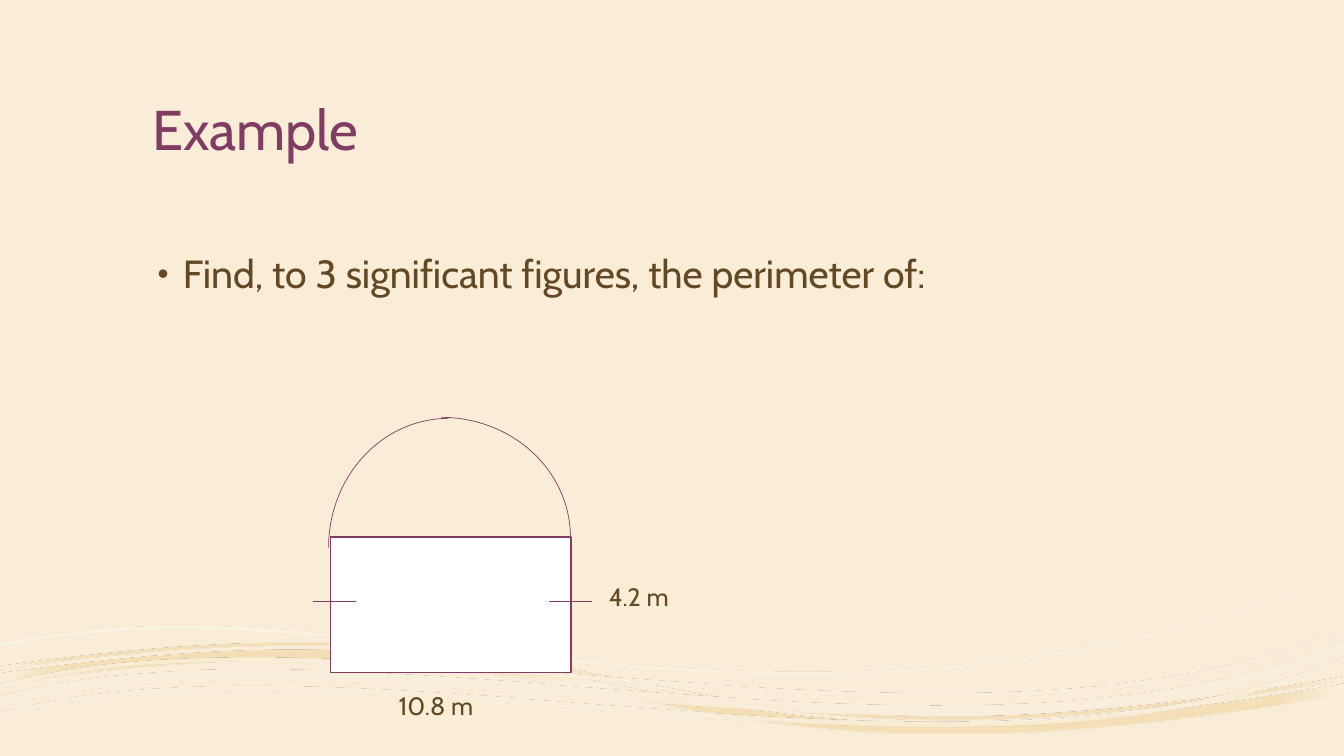
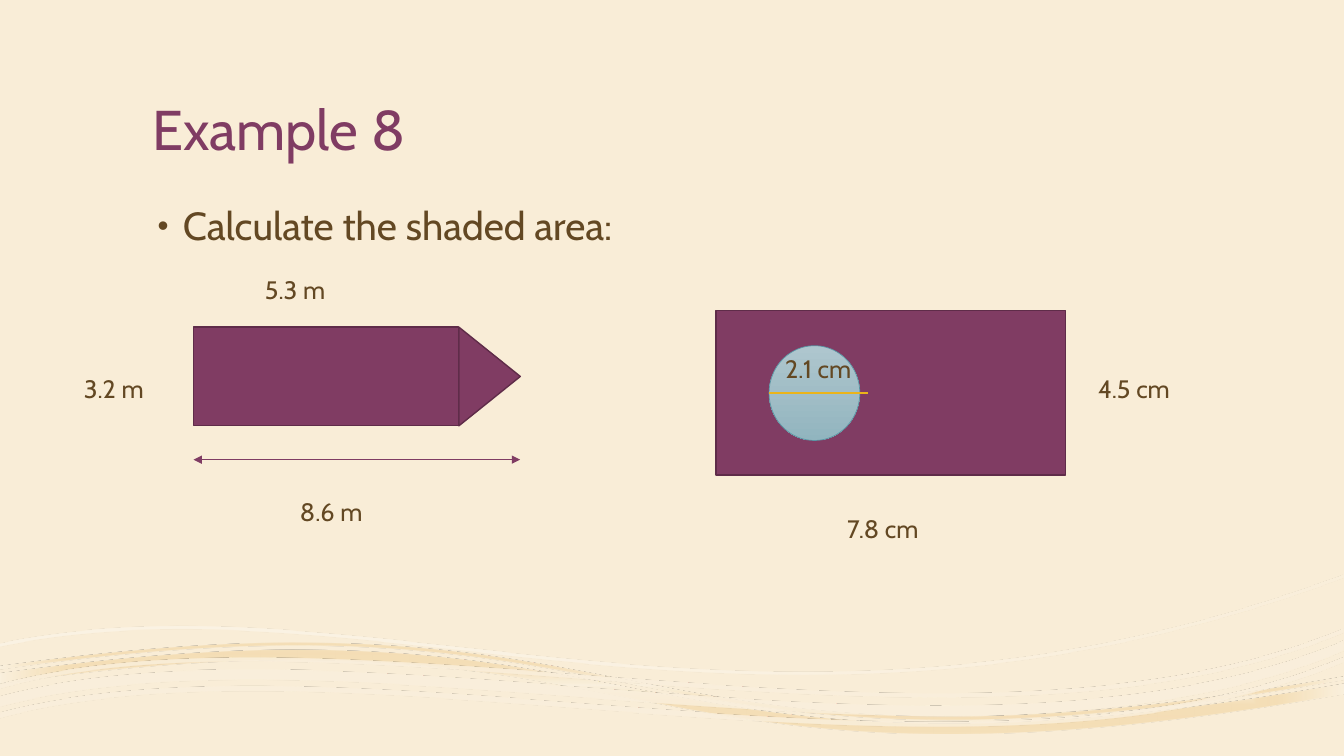
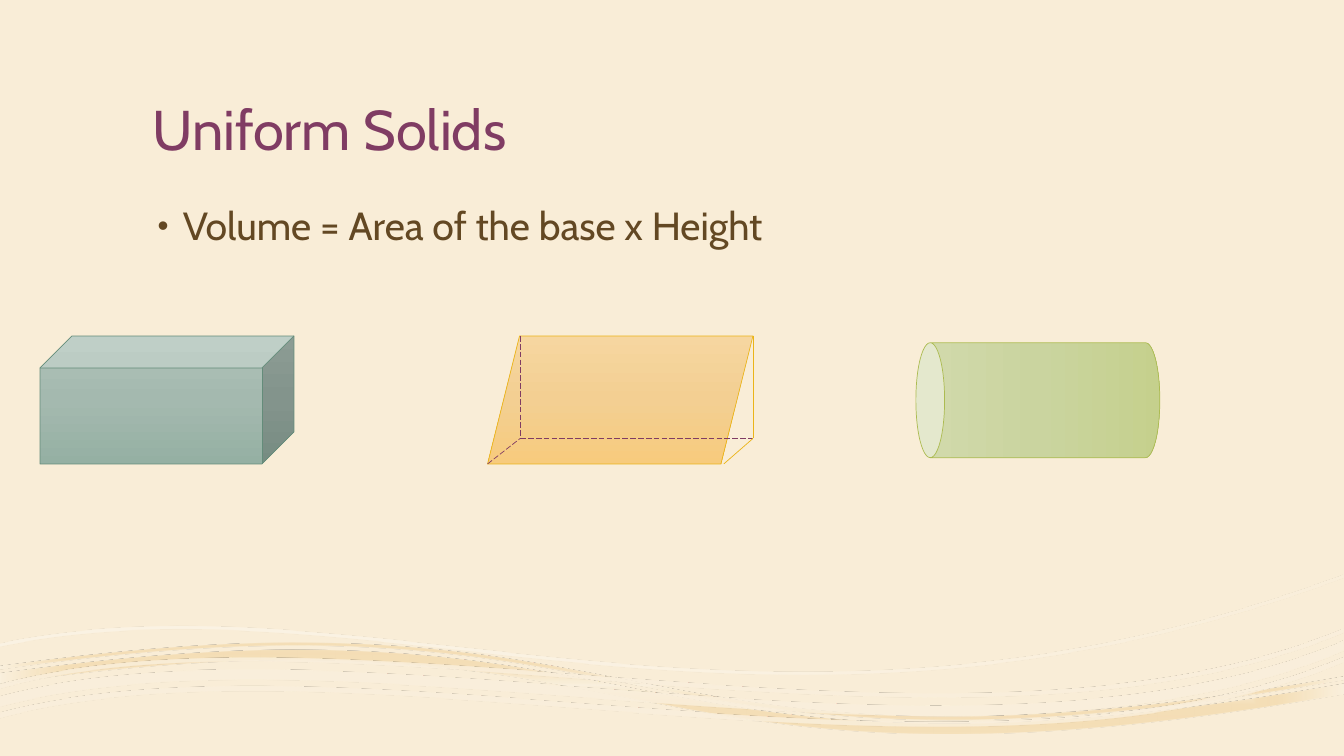
from dataclasses import dataclass
from math import cos, radians, sin
from typing import Any, Optional

from lxml.etree import SubElement
from pptx import Presentation
from pptx.dml.color import RGBColor
from pptx.enum.dml import MSO_LINE
from pptx.enum.shapes import MSO_CONNECTOR, MSO_SHAPE
from pptx.enum.text import MSO_ANCHOR, PP_ALIGN
from pptx.oxml import parse_xml
from pptx.oxml.ns import nsdecls, qn
from pptx.util import Inches, Pt

CELL = Inches(0.1)
WIDE, HIGH = 133.33, 75
FONT = "Cabin"
SAND, PLUM, BROWN = "F9EDD7", "803C63", "634823"
DARK, GOLD, WHITE = "5F2C49", "EBB419", "FFFFFF"
TILT = 3.5

Spot = tuple[float, float]
Area = tuple[float, float, float, float]


@dataclass(frozen=True)
class Blend:
    stops: tuple[tuple, ...]
    angle: int = 90
    shade: str = ""
    focus: tuple[int, int, int, int] = (50, 50, 50, 50)


@dataclass(frozen=True)
class Wave:
    area: Area
    bands: tuple[Spot, ...]
    top: tuple[Spot, ...]
    base: tuple[Spot, ...]
    fill: Blend


@dataclass(frozen=True)
class Form:
    kind: MSO_SHAPE
    area: Area
    fill: Any
    line: str
    width: float = 0.5
    turn: int = 0


@dataclass(frozen=True)
class Rule:
    start: Spot
    end: Spot
    line: str = PLUM
    width: float = 0.5
    dash: Optional[MSO_LINE] = None
    heads: bool = False


@dataclass(frozen=True)
class Label:
    text: str
    left: float
    top: float
    width: float


@dataclass(frozen=True)
class Page:
    title: str
    point: str
    top: float
    items: tuple


def cells(*vals: float) -> list[int]:
    return [round(val * CELL) for val in vals]


def tint(code: str) -> RGBColor:
    return RGBColor.from_string(code)


def adorn(thing: Any, look: dict[str, Any]) -> None:
    for name, val in look.items():
        setattr(thing, name, val)


def write(frame: Any, text: str, size: int, code: str, space: float = 1) -> Any:
    frame.word_wrap = True
    para = frame.paragraphs[0]
    adorn(para, {"alignment": PP_ALIGN.LEFT, "line_spacing": space})
    run = para.add_run()
    run.text = text
    adorn(run.font, {"name": FONT, "size": Pt(size)})
    run.font.color.rgb = tint(code)
    return para


def paint(shape: Any, fill: Any) -> None:
    if fill is None:
        shape.fill.background()
    elif isinstance(fill, str):
        shape.fill.solid()
        shape.fill.fore_color.rgb = tint(fill)
    else:
        blend(shape, fill)


def blend(shape: Any, fill: Blend) -> None:
    shape.fill.background()
    node = parse_xml(f'<a:gradFill {nsdecls("a")} rotWithShape="1"/>')
    stops = SubElement(node, qn("a:gsLst"))
    for place, code, *clear in fill.stops:
        stop = SubElement(stops, qn("a:gs"), pos=str(place * 1000))
        color = SubElement(stop, qn("a:srgbClr"), val=code)
        for part in clear:
            SubElement(color, qn("a:alpha"), val=str(part * 1000))
    if fill.shade:
        shade = SubElement(node, qn("a:path"), path=fill.shade)
        sides = {side: str(val * 1000) for side, val in zip("ltrb", fill.focus)}
        SubElement(shade, qn("a:fillToRect"), **sides)
    else:
        SubElement(node, qn("a:lin"), ang=str(fill.angle * 60000), scaled="0")
    props = shape.element.spPr
    props.replace(props.find(qn("a:noFill")), node)


def stroke(line: Any, code: str, width: float) -> None:
    line.color.rgb = tint(code)
    line.width = Pt(width)


def level(spot: Spot, area: Area) -> Spot:
    left, top, width, height = area
    turn = radians(TILT)
    x, y = spot[0] - left - width / 2, spot[1] - top - height / 2
    return x * cos(turn) - y * sin(turn) + width / 2, x * sin(turn) + y * cos(turn) + height / 2


def trace(track: Any, verb: str, spots: list[Spot], area: Area) -> None:
    step = SubElement(track, qn(f"a:{verb}"))
    for spot in spots:
        x, y = cells(*level(spot, area))
        SubElement(step, qn("a:pt"), x=str(x), y=str(y))


def bend(track: Any, flow: list[Spot], area: Area) -> None:
    for at in range(1, len(flow), 3):
        trace(track, "cubicBezTo", flow[at:at + 3], area)


def draw_wave(slide: Any, layout: Any, wave: Wave, mark: int) -> None:
    left, top, width, height = wave.area
    right, foot = left + width, top + height
    pen = slide.shapes.build_freeform(*cells(left, top), scale=1.0)
    pen.add_line_segments([tuple(cells(*spot)) for spot in ((right, top), (right, foot), (left, foot))])
    shape = pen.convert_to_shape()
    shape.shadow.inherit = False
    shape.line.fill.background()
    shape.rotation = 360 - TILT
    paint(shape, wave.fill)
    track = next(shape.element.iter(qn("a:path")))
    for step in list(track):
        track.remove(step)
    for high, low in wave.bands:
        crest = [(x, y + high) for x, y in wave.top]
        trough = [(x, y + low) for x, y in reversed(wave.base)]
        trace(track, "moveTo", crest[:1], wave.area)
        bend(track, crest, wave.area)
        trace(track, "lnTo", trough[:1], wave.area)
        bend(track, trough, wave.area)
        SubElement(track, qn("a:close"))
    shape.element.nvSpPr.cNvPr.set("id", str(mark))
    layout.shapes.element.append(shape.element)


def draw_form(slide: Any, form: Form) -> None:
    shape = slide.shapes.add_shape(form.kind, *cells(*form.area))
    shape.shadow.inherit = False
    shape.rotation = form.turn
    paint(shape, form.fill)
    stroke(shape.line, form.line, form.width)


def draw_rule(slide: Any, rule: Rule) -> None:
    link = slide.shapes.add_connector(MSO_CONNECTOR.STRAIGHT, *cells(*rule.start, *rule.end))
    stroke(link.line, rule.line, rule.width)
    if rule.dash:
        link.line.dash_style = rule.dash
    props = link.element.spPr
    if rule.heads:
        for end in ("a:headEnd", "a:tailEnd"):
            SubElement(props.find(qn("a:ln")), qn(end), type="triangle")
    SubElement(props, qn("a:effectLst"))


def draw_label(slide: Any, label: Label) -> None:
    box = slide.shapes.add_textbox(*cells(label.left, label.top, label.width, 4))
    write(box.text_frame, label.text, 18, BROWN)


def draw_point(slide: Any, text: str, top: float) -> None:
    box = slide.shapes.add_textbox(*cells(14.15, top, 105, 43.3))
    para = write(box.text_frame, text, 28, BROWN, 0.9)
    props = para._p.get_or_add_pPr()
    for name, val in {"marL": 0.3, "indent": -0.25}.items():
        props.set(name, str(Inches(val)))
    SubElement(props, qn("a:buSzPct"), val="80000")
    SubElement(props, qn("a:buFont"), typeface="Arial")
    SubElement(props, qn("a:buChar"), char="•")


def draw_title(slide: Any, text: str) -> None:
    title = slide.shapes.title
    adorn(title, dict(zip(("left", "top", "width", "height"), cells(14.13, 3.3, 105, 13.3))))
    title.text_frame.vertical_anchor = MSO_ANCHOR.BOTTOM
    write(title.text_frame, text, 40, PLUM, 0.9)


DRAW = {Form: draw_form, Rule: draw_rule, Label: draw_label}


def fade(*codes: str) -> Blend:
    return Blend(tuple(zip((0, 50, 100), codes)))


SWELL = ((WIDE, 0), (95.5, 15.8), (34.9, -3.9), (0, 5.5))
CREST = ((WIDE, 0), (75.4, 21.5), (37.3, -1), (0, 6.8))
WAVES = (
    Wave(
        (0.1, 61.2, 133.1, 13.5),
        ((67.8, 68.8), (67.1, 67.4)),
        ((WIDE, 0), (73.8, 10.4), (67, -3.1), (30.6, -3.3), (22.2, -3.4), (12.4, -2.7), (0, -1)),
        ((WIDE, 0), (60.2, 12.8), (66.7, -10.5), (0, -1)),
        Blend(((0, "FAF1DF", 90), (18, "F4DEB7"), (37, "F4DDB3", 90), (100, "FAF1DF")), shade="shape"),
    ),
    Wave(
        (0.3, 58.8, 133.5, 17.1), ((57, 57.3),), CREST, CREST,
        Blend(((36, WHITE, 30), (100, SAND, 48)), 45),
    ),
    Wave(
        (-0.1, 62.5, 133.6, 11.5),
        ((65.2, 65.7), (63.6, 64.6), (62.4, 62.8)), SWELL, SWELL,
        Blend(((36, WHITE, 47), (100, "FAEFDC", 82)), shade="rect", focus=(100, 100, 0, 0)),
    ),
)

LEFT, BACK, RIGHT = 48.37, 51.6, 74.7
ROOF, REAR, FLOOR = 33.33, 43.5, 46.03
DASH = MSO_LINE.LONG_DASH

PAGES = (
    Page("Example", "Find, to 3 significant figures, the perimeter of:", 24.75, (
        Form(MSO_SHAPE.RECTANGLE, (32.76, 53.27, 23.9, 13.46), WHITE, PLUM, 1),
        Form(MSO_SHAPE.ARC, (31, 41.4, 25.6, 23.8), None, PLUM),
        Form(MSO_SHAPE.ARC, (31.7, 42.4, 25.6, 23.8), None, PLUM, turn=270),
        Label("10.8 m", 38.55, 68, 12.2),
        Label("4.2 m", 59.42, 57.15, 9.9),
        *(Rule((col, 59.62), (col + 4.25, 59.62)) for col in (31.04, 54.5)),
    )),
    Page("Example 8", "Calculate the shaded area:", 20, (
        Form(MSO_SHAPE.RECTANGLE, (19.2, 32.42, 26.3, 9.8), PLUM, DARK, 1),
        Form(MSO_SHAPE.ISOSCELES_TRIANGLE, (43.67, 34.3, 9.8, 6.1), PLUM, DARK, 1, 90),
        Form(MSO_SHAPE.RECTANGLE, (71.02, 30.8, 34.7, 16.33), PLUM, DARK, 1),
        Form(MSO_SHAPE.OVAL, (76.3, 34.3, 9, 9.4), fade("AEC6CE", "A1BDC6", "91B5BF"), "5A95A4"),
        Label("5.3 m", 25.3, 26.7, 16.5),
        Label("3.2 m", 7.33, 36.5, 11.8),
        Label("8.6 m", 28.77, 48.75, 19.8),
        Rule((19.2, 45.6), (51.6, 45.6), heads=True),
        Label("7.8 cm", 83.06, 50.45, 14.5),
        Label("4.5 cm", 107.96, 36.5, 11.2),
        Label("2.1 cm", 76.9, 34.55, 11.8),
        Rule((76.3, 39), (86.1, 39), GOLD, 1.5),
    )),
    Page("Uniform Solids", "Volume = Area of the base x Height", 20, (
        Form(MSO_SHAPE.CUBE, (3.96, ROOF, 25.2, 12.7), fade("B0C3BA", "A4B9AF", "95B0A3"), "648C7A"),
        Form(MSO_SHAPE.PARALLELOGRAM, (LEFT, ROOF, RIGHT - LEFT, FLOOR - ROOF),
             fade("F6D6A0", "F3CF92", "F7CB7D"), GOLD),
        Rule((RIGHT, ROOF), (RIGHT, REAR), GOLD),
        Rule((BACK, ROOF), (BACK, REAR), dash=DASH),
        Rule((BACK, REAR), (RIGHT, REAR), dash=DASH),
        Rule((LEFT, FLOOR), (BACK, REAR), dash=DASH),
        Rule((71.8, FLOOR), (RIGHT, REAR), GOLD),
        Form(MSO_SHAPE.CAN, (97.26, 27.6, 11.4, 24.2), fade("D2DAAC", "CAD49F", "C5D08D"), "ACBB51", turn=270),
    )),
)


def main() -> None:
    deck = Presentation()
    deck.slide_width, deck.slide_height = cells(WIDE, HIGH)
    back = deck.slide_master.background.fill
    back.solid()
    back.fore_color.rgb = tint(SAND)
    layout = deck.slide_layouts[5]
    for num, page in enumerate(PAGES):
        slide = deck.slides.add_slide(layout)
        if num == 0:
            for mark, wave in enumerate(WAVES, 20):
                draw_wave(slide, layout, wave, mark)
        draw_title(slide, page.title)
        draw_point(slide, page.point, page.top)
        for item in page.items:
            DRAW[type(item)](slide, item)
    deck.save("out.pptx")


if __name__ == "__main__":
    main()
